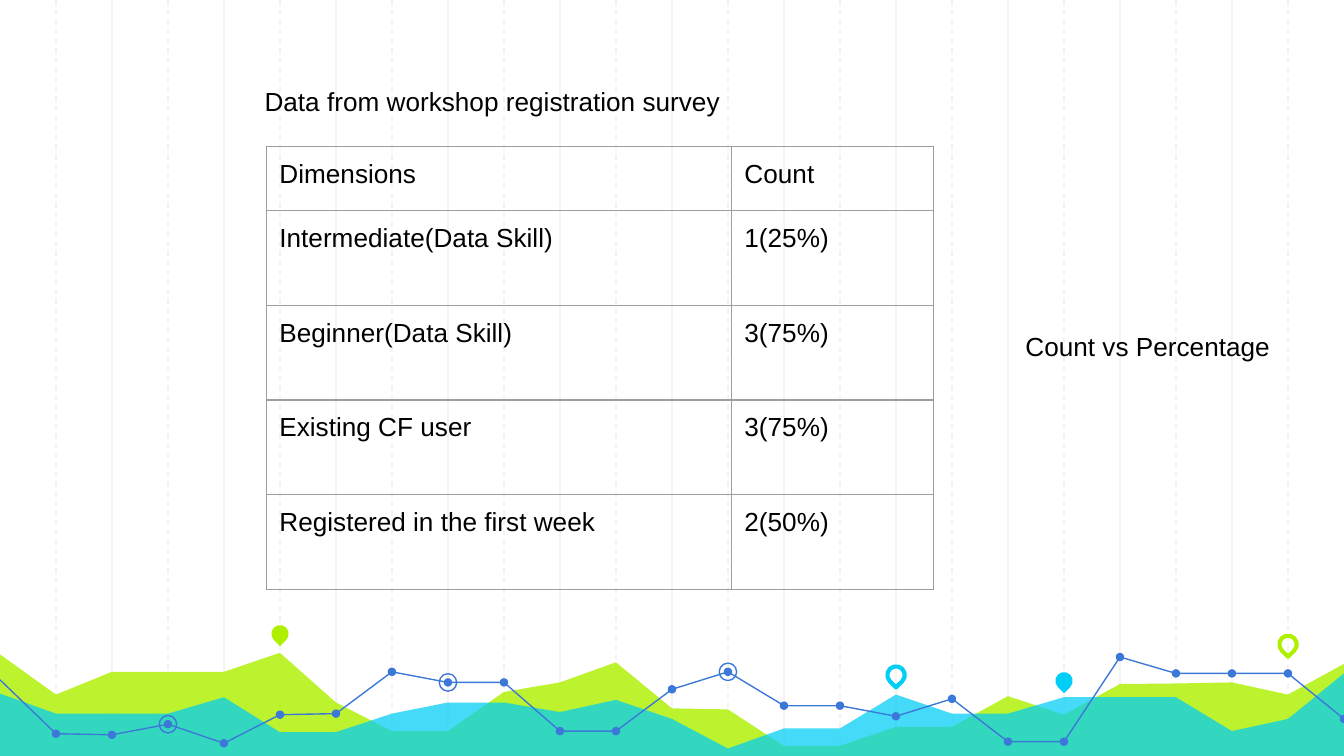
from dataclasses import dataclass

from lxml.etree import SubElement
from pptx import Presentation
from pptx.dml.color import RGBColor as Rgb
from pptx.enum.dml import MSO_LINE as Dash
from pptx.enum.shapes import MSO_CONNECTOR as Conn, MSO_SHAPE as Kind
from pptx.oxml.ns import qn
from pptx.util import Cm, Pt


@dataclass(frozen=True)
class Theme:
    font: str = "Arial"
    size: int = 14
    ink: str = "000000"
    grid: str = "F3F3F3"
    lime: str = "AFF000"
    cyan: str = "00CEF6"
    blue: str = "3C78D8"
    edge: str = "9E9E9E"
    thin: float = 0.75
    bold: float = 2.25


def write(frame, text, box=None, size=Theme.size, font=Theme.font, color=Theme.ink):
    """Fill a frame with text; box holds the margins when the frame does not."""
    box = box or frame
    box.margin_left = box.margin_right = Cm(0.25)
    box.margin_top = box.margin_bottom = Cm(0.25)
    frame.word_wrap = True
    run = frame.paragraphs[0].add_run()
    run.text = text
    run.font.size, run.font.name = Pt(size), font
    run.font.color.rgb = Rgb.from_string(color)


def paint(shape, fill=None, line=None, width=Theme.thin, alpha=None):
    """Set fill and line of a shape, either of which may be absent."""
    shape.shadow.inherit = False
    if fill:
        shape.fill.solid()
        shape.fill.fore_color.rgb = Rgb.from_string(fill)
    else:
        shape.fill.background()
    if line:
        shape.line.color.rgb = Rgb.from_string(line)
        shape.line.width = Pt(width)
    else:
        shape.line.fill.background()
    if alpha:
        tone = shape.fill._xPr.find(qn("a:solidFill"))[0]
        SubElement(tone, qn("a:alpha"), val=str(alpha * 1000))


theme = Theme()
deck = Presentation()
deck.slide_width, deck.slide_height = Cm(25.4), Cm(14.29)
slide = deck.slides.add_slide(deck.slide_layouts[6])
shapes = slide.shapes

# Everything in the backdrop sits on 24 equal columns
step = 25.4 / 24
base = 14.35

# Grid: solid lines on even columns, dashed on odd ones
for first, dash in ((2, Dash.SOLID), (1, Dash.DASH)):
    for col in range(first, 24, 2):
        x = Cm(col * step)
        rule = shapes.add_connector(Conn.STRAIGHT, x, 0, x, Cm(base))
        rule.line.color.rgb = Rgb.from_string(theme.grid)
        rule.line.width = Pt(theme.thin)
        rule.line.dash_style = dash
        SubElement(rule._element.spPr, qn("a:effectLst"))

# Areas: one height per column
lime = [12.37, 13.13, 12.7, 12.7, 12.7, 12.34, 13.28, 13.82, 13.82, 13.08,
        12.9, 12.52, 13.39, 13.41, 14.1, 14.1, 13.74, 13.74, 13.16, 13.51,
        12.93, 12.92, 12.9, 13.13, 12.55]
cyan = [13.11, 13.49, 13.49, 13.49, 13.18, 13.84, 13.84, 13.49, 13.28, 13.28,
        13.46, 13.23, 13.59, 14.15, 13.77, 13.77, 13.13, 13.49, 13.49, 13.18,
        13.18, 13.18, 13.82, 13.59, 12.73]
for tops, color, alpha in ((lime, theme.lime, 82), (cyan, theme.cyan, 73)):
    spots = [(Cm(col * step), Cm(y)) for col, y in enumerate(tops)]
    spots += [(Cm(25.4), Cm(base)), (0, Cm(base))]
    path = shapes.build_freeform(*spots[0])
    path.add_line_segments(spots[1:], close=True)
    paint(path.convert_to_shape(), fill=color, alpha=alpha)

# Line in three stretches
trend = [12.85, 13.87, 13.89, 13.69, 14.05, 13.51, 13.49, 12.7, 12.9, 12.9,
         13.82, 13.82, 13.03, 12.7, 13.34, 13.34, 13.54, 13.21, 14.02, 14.02,
         12.42, 12.73, 12.73, 12.73, 13.59]
spots = [(Cm(col * step), Cm(y)) for col, y in enumerate(trend)]
for start, end in ((0, 11), (11, 20), (20, 24)):
    path = shapes.build_freeform(*spots[start])
    path.add_line_segments(spots[start + 1:end + 1], close=False)
    paint(path.convert_to_shape(), line=theme.blue)

# Dots on the line, then rings around three of them
dot, ring = Cm(0.16), Cm(0.33)
for x, y in spots[1:]:
    mark = shapes.add_shape(Kind.OVAL, x - dot // 2, y - dot // 2, dot, dot)
    paint(mark, fill=theme.blue)
for col in (3, 8, 13):
    x, y = spots[col]
    mark = shapes.add_shape(Kind.OVAL, x - ring // 2, y - ring // 2, ring, ring)
    paint(mark, line=theme.blue)

# Pins: column, height, look
pins = [
    (5, 11.98, dict(fill=theme.lime)),
    (16, 12.76, dict(line=theme.cyan, width=theme.bold)),
    (19, 12.87, dict(fill=theme.cyan)),
    (23, 12.18, dict(line=theme.lime, width=theme.bold)),
]
for col, y, look in pins:
    pin = shapes.add_shape(Kind.TEAR, Cm(col * step) - ring // 2,
                           Cm(y) - ring // 2, ring, ring)
    pin.rotation = 135
    paint(pin, **look)

# Survey table
rows = [
    ("Dimensions", "Count"),
    ("Intermediate(Data Skill)", "1(25%)"),
    ("Beginner(Data Skill)", "3(75%)"),
    ("Existing CF user", "3(75%)"),
    ("Registered in the first week", "2(50%)"),
]
wide, high = (8.79, 3.82), (1.21, 1.79, 1.79, 1.79, 1.79)
table = shapes.add_table(len(rows), 2, Cm(5.03), Cm(2.77),
                         Cm(sum(wide)), Cm(sum(high))).table
table.first_row = table.horz_banding = False
for col, width in zip(table.columns, wide):
    col.width = Cm(width)
for row, height, texts in zip(table.rows, high, rows):
    row.height = Cm(height)
    for cell, text in zip(row.cells, texts):
        write(cell.text_frame, text, box=cell)
        props = cell._tc.get_or_add_tcPr()
        for side in ("lnL", "lnR", "lnT", "lnB"):
            edge = SubElement(props, qn("a:" + side), w=str(Pt(theme.thin)))
            tone = SubElement(edge, qn("a:solidFill"))
            SubElement(tone, qn("a:srgbClr"), val=theme.edge)
        cell.fill.background()

# Captions
for text, *place in (
    ("Data from workshop registration survey", 4.75, 1.37, 9.6, 1.02),
    ("Count vs Percentage", 19.13, 5.99, 5.46, 1.35),
):
    label = shapes.add_textbox(*map(Cm, place))
    write(label.text_frame, text)

deck.save("out.pptx")
